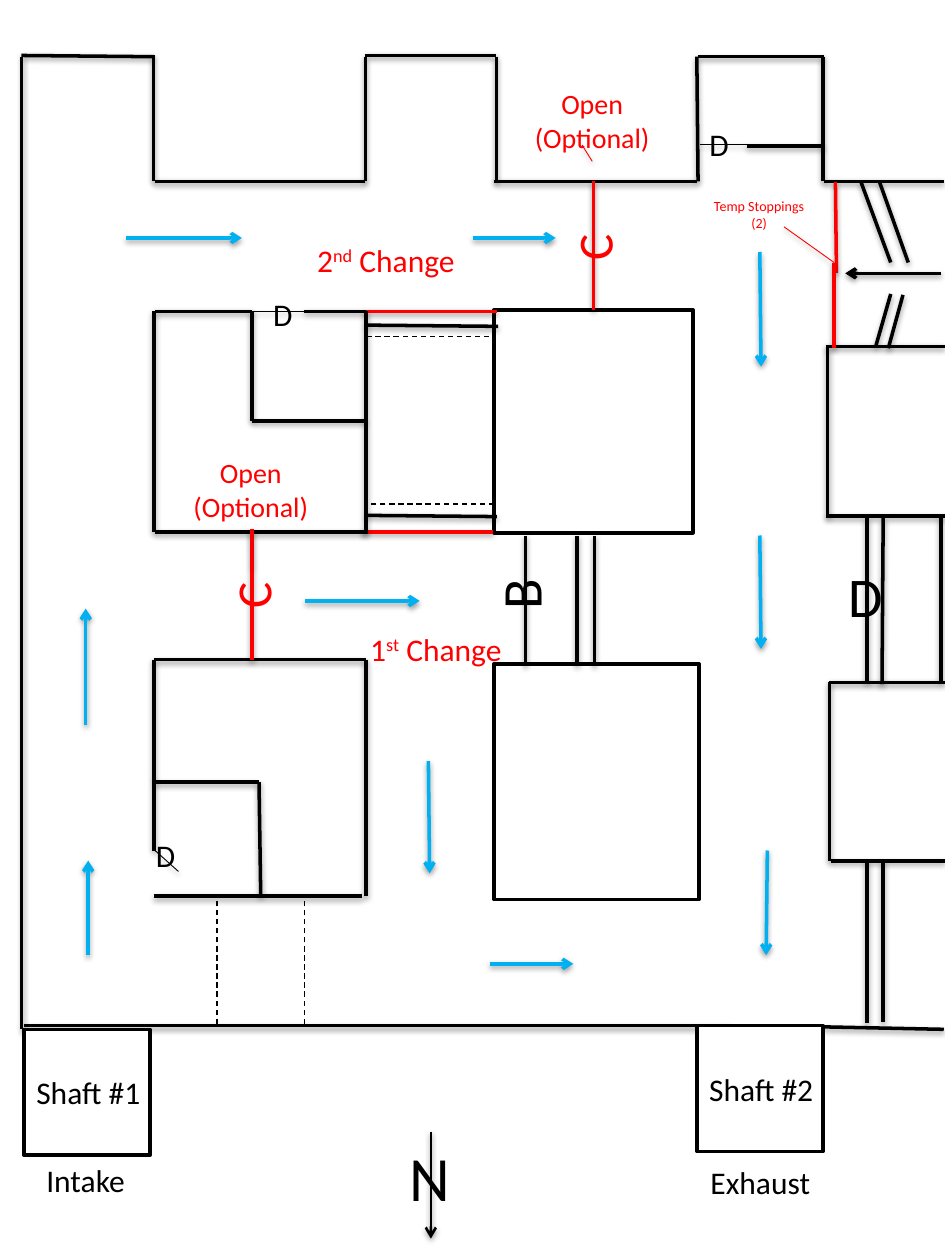
from lxml import etree
from pptx import Presentation
from pptx.dml.color import RGBColor
from pptx.enum.dml import MSO_LINE
from pptx.enum.shapes import MSO_CONNECTOR, MSO_SHAPE
from pptx.enum.text import MSO_ANCHOR, MSO_AUTO_SIZE, PP_ALIGN
from pptx.oxml.ns import qn
from pptx.util import Pt

BLACK = RGBColor(0x00, 0x00, 0x00)
WHITE = RGBColor(0xFF, 0xFF, 0xFF)
RED = RGBColor(0xFF, 0x00, 0x00)
BLUE = RGBColor(0x00, 0xB0, 0xF0)
STRAIGHT = MSO_CONNECTOR.STRAIGHT
RECTANGLE = MSO_SHAPE.RECTANGLE
DASH = MSO_LINE.DASH
CENTER, LEFT = PP_ALIGN.CENTER, PP_ALIGN.LEFT
MIDDLE = MSO_ANCHOR.MIDDLE
FIT = MSO_AUTO_SIZE.SHAPE_TO_FIT_TEXT
FONT = "Calibri"
DOOR = (26, 28.8)  # size of a small door label


def add_line(page, box, ends, color=BLACK, weight=2, arrow=False, dashed=False):
    """Draw a line whose ends are measured from the corner of the box."""
    left, top = box[:2]
    x1, y1, x2, y2 = ends
    line = page.shapes.add_connector(
        STRAIGHT, Pt(left + x1), Pt(top + y1), Pt(left + x2), Pt(top + y2))
    line.line.color.rgb = color
    line.line.width = Pt(weight)
    properties = line.element.spPr
    if dashed:
        line.line.dash_style = DASH
        etree.SubElement(properties, qn("a:effectLst"))
    if arrow:
        etree.SubElement(properties.find(qn("a:ln")), qn("a:tailEnd"), type="arrow")
    return line


def add_lines(page, box, all_ends, **style):
    for ends in all_ends:
        add_line(page, box, ends, **style)


def add_span(para, text, size, color):
    span = para.add_run()
    span.text = text
    span.font.name = FONT
    span.font.size = Pt(size)
    span.font.color.rgb = color
    return span


def add_label(page, box, place, text, size=18, color=BLACK, turn=0,
              align=LEFT, wrap=False):
    """Write a label; a caret pair in the text encloses a superscript."""
    x, y, width, height = place
    label = page.shapes.add_textbox(
        Pt(box[0] + x), Pt(box[1] + y), Pt(width), Pt(height))
    label.rotation = turn
    frame = label.text_frame
    frame.word_wrap = wrap
    frame.auto_size = FIT
    for number, words in enumerate(text.split("\n")):
        para = frame.add_paragraph() if number else frame.paragraphs[0]
        para.alignment = align
        for part, piece in enumerate(words.split("^")):
            span = add_span(para, piece, size, color)
            if part == 1:
                span.font._element.set("baseline", "30000")


def add_block(page, box):
    block = page.shapes.add_shape(RECTANGLE, *(Pt(length) for length in box))
    block.shadow.inherit = False
    block.fill.solid()
    block.fill.fore_color.rgb = WHITE
    block.line.color.rgb = BLACK
    block.line.width = Pt(2)
    return block


def draw_outer_walls(page, box):
    right, bottom = box[2:]
    add_lines(page, box, [
        (0.2, 0.4, 0.2, bottom), (75.8, 0.4, 0.2, -0.3), (75.8, -0.3, 75.8, 71.7),
        (76.6, 71.7, 196.8, 71.7), (196.8, 0.4, 196.8, 71.7),
        (196.8, -0.3, 271.7, -0.3), (271.7, 0.4, 271.7, 71.7),
        (270.2, 71.7, 386.2, 71.7), (386.2, 0.4, 386.9, 71.7),
        (386.9, 0.4, 458.9, 0.4), (458.2, 0.4, 458.2, 71.7),
        (458.9, 71.7, right, 71.7),
        (1.7, 554.1, 404.9, 554.1), (458.2, 554.8, right, bottom)])
    # Door in the right niche
    add_line(page, box, (458.9, 51.5, 415, 51.5))
    add_line(page, box, (415, 50.8, 388.3, 50.8), weight=0.5)
    add_label(page, box, (386.2, 35.7, *DOOR), "D")


def draw_upper_left_pillar(page, box):
    right, bottom = box[2:]
    add_lines(page, box, [
        (0.6, 0, 56, 0), (0, 0, 0, bottom), (0.6, bottom, right, bottom),
        (right, 0, right, bottom + 1), (right, 0, 86, 0),
        (right, 62.5, 56, 62.5), (56, 62.5, 56, 0)])
    add_line(page, box, (86, 0, 56, 0), weight=0.5)
    add_label(page, box, (61, -13, *DOOR), "D")


def draw_overcast(page, box):
    right, bottom = box[2:]
    add_lines(page, box, [(0, 0, right, 0), (-2, bottom, right - 2, bottom)], color=RED)
    add_lines(page, box, [(0, 7.8, 75.6, 8.5), (0, 116.5, right, 117.2)])
    add_lines(page, box, [(70.4, 14.2, -1.6, 14.2), (73.2, 110, 1.2, 110)],
              weight=0.75, dashed=True)


def draw_lower_left_pillar(page, box):
    right, bottom = box[2:]
    add_lines(page, box, [
        (0, 0, right, 0), (right, 0, right, bottom), (right - 2, bottom, 0, bottom),
        (0, 0, 0, 67), (0, 67, 0, 109), (61, bottom, 60, 70), (60, 70, 0.6, 70)])
    add_line(page, box, (0.6, 109, 14, 121), weight=0.5)
    add_label(page, box, (-6, 97, *DOOR), "D")
    add_lines(page, box, [(x, 208, x, bottom) for x in (36, 86)],
              weight=0.75, dashed=True)


def draw_middle_stopping(page, box):
    add_lines(page, box, [(x, 0, x, box[3]) for x in (0, 29.6, 39.6)])
    add_label(page, box, (-19.4, 10.1, 32.4, 46.1), "B", size=32, turn=270)


def draw_right_side(page, box):
    right = box[2]
    # Pillars cut by the edge of the map
    add_lines(page, box, [
        (0, 94, right, 94), (1, 94, 1, 191), (0, 191, right, 191),
        (2, 286, right, 286), (2, 286, 2, 388), (3, 388, right, 388)])
    # Stoppings between the pillars
    add_lines(page, box, [
        (23.4, 192, 23.4, 286), (32.7, 192, 32, 287), (65.8, 191, 65.8, 285),
        (23.4, 388, 23.4, 480.6), (32.7, 388, 32.7, 480)])
    # Slanted doors
    add_lines(page, box, [
        (20, 0, 37, 46), (30.6, 0, 47, 46),
        (28.4, 94, 37, 64), (35.6, 95, 44, 64.5)])
    add_line(page, box, (65.8, 52.2, 11, 52.2), arrow=True)
    add_label(page, box, (6, 213.5, 34.6, 46.1), "D", size=32)
    # Temporary stoppings
    add_lines(page, box, [(5.4, 0, 6, 52), (4.6, 95, 4.6, 46.5)], color=RED)
    add_label(page, box, (-71.7, 5.4, 67, 26.6), "Temp Stoppings\n(2)",
              size=8, color=RED, align=CENTER, wrap=True)
    add_line(page, box, (-24, 25.6, 4.6, 46), color=RED, weight=0.5)


def draw_curtain(page, box, note_top, leader, leader_weight):
    """Draw a red curtain line with its letter and note; return the line."""
    curtain = add_line(page, box, (0, 0, 0, box[3]), color=RED)
    add_label(page, box, (-15.5, 16.5, 31, 41), "C", size=28, color=RED, turn=270)
    add_label(page, box, (-41, note_top, 80.6, 46), "Open\n(Optional)",
              size=16, color=RED, align=CENTER)
    add_line(page, box, leader, color=RED, weight=leader_weight)
    return curtain


def draw_shaft(page, box, name, use, use_place):
    shaft = add_block(page, box)
    frame = shaft.text_frame
    frame.word_wrap = False
    frame.vertical_anchor = MIDDLE
    frame.paragraphs[0].alignment = LEFT
    add_span(frame.paragraphs[0], name, 18, BLACK)
    add_label(page, box, use_place, use)


def draw_airflow(page, box):
    add_lines(page, box, [
        (50.4, 545.8, 50.4, 491.8), (49, 414, 49, 347.8),
        (72, 136, 138.2, 136), (270, 136, 317.5, 136),
        (434.2, 144, 434.9, 209.5), (434.2, 306, 434.9, 370.8),
        (438.5, 486, 437.8, 545.8), (174.2, 343.4, 239.8, 343.4),
        (244.8, 434.9, 245.5, 499), (280, 550.8, 327.6, 550.8)],
        color=BLUE, arrow=True)
    add_label(page, box, (204.5, 356.4, 91.4, 28.8), "1^st^ Change", color=RED)
    add_label(page, box, (174.2, 134, 95.8, 28.8), "2^nd^ Change", color=RED)


def draw_compass(page, box):
    add_line(page, box, (19.4, 0, 19.4, box[3]), weight=1.5, arrow=True)
    add_label(page, box, (0, 0.7, 38, 51), "N", size=36)


def main():
    deck = Presentation()
    deck.slide_width, deck.slide_height = Pt(540), Pt(720)
    page = deck.slides.add_slide(deck.slide_layouts[6])

    upper_block = add_block(page, (282.2, 177.1, 113.8, 127.4))
    add_block(page, (282.2, 379.4, 117.4, 134.6))
    draw_outer_walls(page, (12, 32, 527.3, 556.2))
    draw_shaft(page, (13.7, 588.2, 72, 72), "Shaft #1", "Intake", (5.7, 72, 60, 28.8))
    draw_shaft(page, (398.2, 586.1, 72, 72), "Shaft #2", "Exhaust", (0.7, 75, 72, 28.8))
    draw_middle_stopping(page, (300.2, 306, 40, 74.2))
    draw_right_side(page, (472, 104, 68, 481))
    draw_overcast(page, (209, 178, 75, 126))
    draw_upper_left_pillar(page, (88, 178, 121, 126))
    draw_lower_left_pillar(page, (88, 377, 121, 135))
    upper_curtain = draw_curtain(page, (339.1, 103.7, 0, 73.4), -57.7,
                                 (-0.7, -11.5, -6.5, -20.9), 0.5)
    upper_curtain.end_connect(upper_block, 0)
    draw_curtain(page, (144, 302.4, 0, 74.9), -45.4, (-0.7, 0.7, 0, 22.3), 0.75)
    draw_airflow(page, (0, 0, 540, 720))
    draw_compass(page, (226.8, 646.6, 38, 61.2))
    deck.save("out.pptx")


if __name__ == "__main__":
    main()
